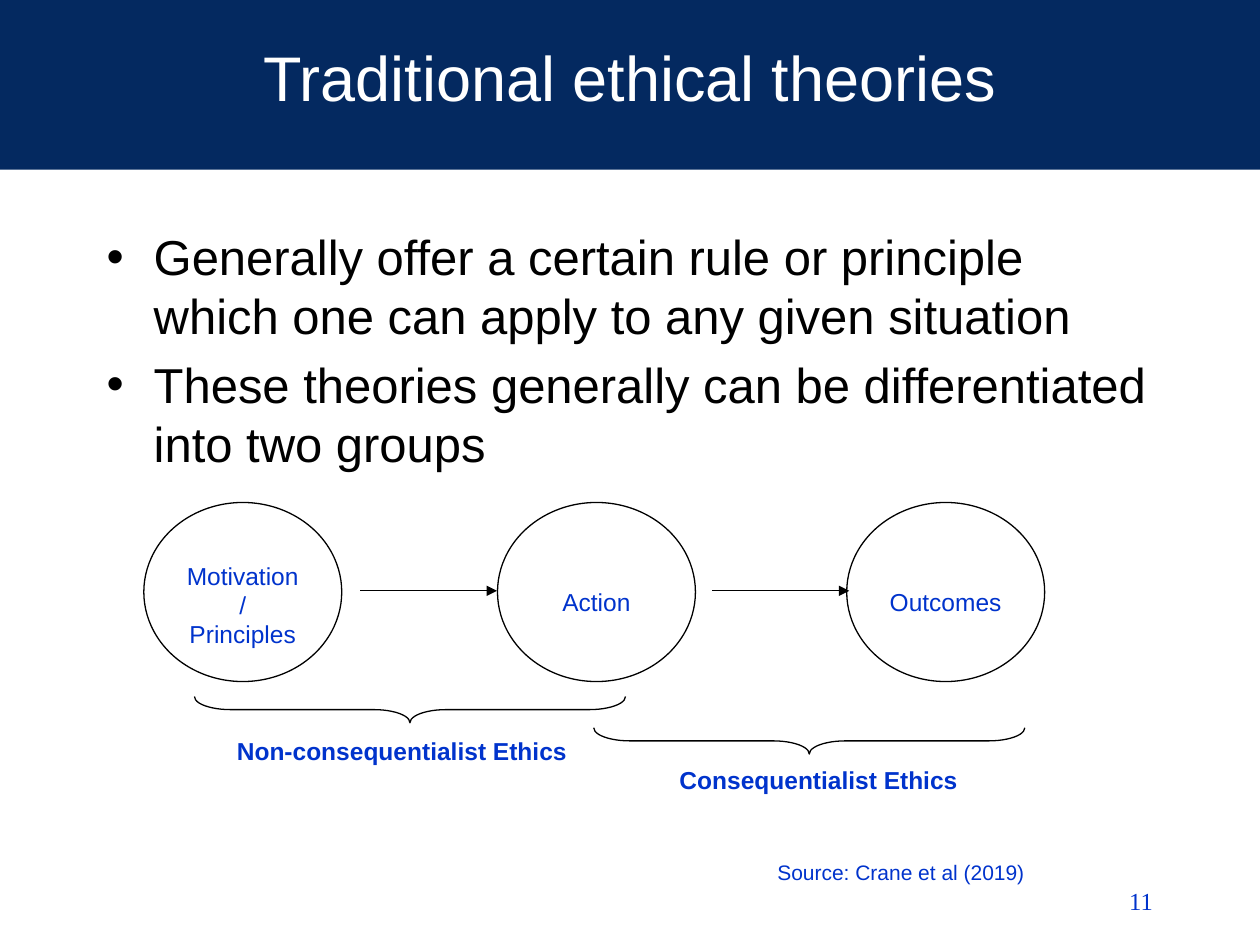
from lxml.etree import SubElement
from pptx import Presentation
from pptx.dml.color import RGBColor
from pptx.enum.shapes import MSO_CONNECTOR as Line, MSO_SHAPE as Preset
from pptx.enum.text import MSO_ANCHOR as Anchor, PP_ALIGN as Align
from pptx.oxml.ns import qn
from pptx.util import Cm, Pt

COLOURS = {"navy": "042960", "blue": "0033CC", "white": "FFFFFF", "black": "000000"}
CIRCLE_TOP, CIRCLE_WIDTH, CIRCLE_HEIGHT = 10.13, 3.99, 3.61
ARROW_Y, ARROW_LENGTH = 11.91, 2.76
STAGES = [
    (2.9, ["Motivation/", "Principles"], 0.64),
    (10.03, ["Action"], 0.5),
    (17.07, ["Outcomes"], 0.5),
]
ARROW_STARTS = [7.26, 14.36]
GROUPS = [
    ("Non-consequentialist Ethics", 4.5, 14.73, 8.0, 9.96),
    ("Consequentialist Ethics", 12.9, 15.32, 16.05, 10.59),
]
POINTS = [
    "Generally offer a certain rule or principle which one can apply to any given situation",
    "These theories generally can be differentiated into two groups",
]


def rgb(name):
    return RGBColor.from_string(COLOURS[name])


def write(frame, lines, size, colour="blue", align=Align.LEFT, font="Arial", bold=False):
    frame.text = "\n".join(lines)
    for paragraph in frame.paragraphs:
        paragraph.alignment = align
        for run in paragraph.runs:
            run.font.name = font
            run.font.size = Pt(size)
            run.font.bold = bold
            run.font.color.rgb = rgb(colour)


def add_text(slide, box, lines, size, wrap=True, anchor=Anchor.TOP, **style):
    frame = slide.shapes.add_textbox(*map(Cm, box)).text_frame
    frame.word_wrap = wrap
    frame.vertical_anchor = anchor
    write(frame, lines, size, **style)
    return frame


def add_preset(slide, preset, box, fill=None, line=None):
    shape = slide.shapes.add_shape(preset, *map(Cm, box))
    shape.shadow.inherit = False
    if fill:
        shape.fill.solid()
        shape.fill.fore_color.rgb = rgb(fill)
    else:
        shape.fill.background()
    if line:
        shape.line.color.rgb = rgb(line)
        shape.line.width = Pt(0.75)
    else:
        shape.line.fill.background()
    return shape


def add_points(slide):
    frame = add_text(slide, (1.9, 4.45, 21.59, 5.49), POINTS, 28, colour="black")
    for paragraph in frame.paragraphs:
        paragraph.space_before = Pt(5.6)
        properties = paragraph._p.get_or_add_pPr()
        properties.set("marL", str(Cm(0.95)))
        properties.set("indent", str(-Cm(0.95)))
        SubElement(properties, qn("a:buFont"), typeface="Arial")
        SubElement(properties, qn("a:buChar"), char="•")


def add_stage(slide, left, lines, drop):
    box = (left, CIRCLE_TOP, CIRCLE_WIDTH, CIRCLE_HEIGHT)
    frame = add_preset(slide, Preset.OVAL, box, "white", "black").text_frame
    frame.word_wrap = True
    frame.vertical_anchor = Anchor.MIDDLE
    frame.margin_top = Cm(drop)
    if lines == ["Outcomes"]:
        frame.margin_left = frame.margin_right = 0
    write(frame, lines, 14, align=Align.CENTER)


def add_arrow(slide, start):
    ends = (start, ARROW_Y, start + ARROW_LENGTH, ARROW_Y)
    arrow = slide.shapes.add_connector(Line.STRAIGHT, *map(Cm, ends))
    arrow.line.color.rgb = rgb("black")
    arrow.line.width = Pt(0.75)
    SubElement(arrow.line._get_or_add_ln(), qn("a:tailEnd"), type="triangle")
    SubElement(arrow._element.spPr, qn("a:effectLst"))


def add_group(slide, label, left, top, brace_left, brace_top):
    brace = add_preset(slide, Preset.LEFT_BRACE, (brace_left, brace_top, 0.53, 8.69), line="black")
    brace.rotation = 270
    brace.adjustments[0] = 1.37
    add_text(slide, (left, top, 7.21, 0.81), [label], 14, wrap=False,
             anchor=Anchor.MIDDLE, align=Align.CENTER, bold=True)


def main():
    deck = Presentation()
    deck.slide_width, deck.slide_height = Cm(25.4), Cm(19.05)
    slide = deck.slides.add_slide(deck.slide_layouts[6])
    add_preset(slide, Preset.RECTANGLE, (0, 0, 25.4, 3.42), "navy")
    add_text(slide, (1.27, 0.66, 22.86, 2.74), ["Traditional ethical theories"], 36,
             colour="white", align=Align.CENTER)
    add_points(slide)
    for stage in STAGES:
        add_stage(slide, *stage)
    for start in ARROW_STARTS:
        add_arrow(slide, start)
    for group in GROUPS:
        add_group(slide, *group)
    add_text(slide, (15.42, 17.2, 7.32, 0.76), ["Source: Crane et al (2019)"], 12)
    add_text(slide, (18.21, 17.73, 5.28, 0.89), ["11"], 14,
             align=Align.RIGHT, font="Times New Roman")
    deck.save("out.pptx")


if __name__ == "__main__":
    main()
